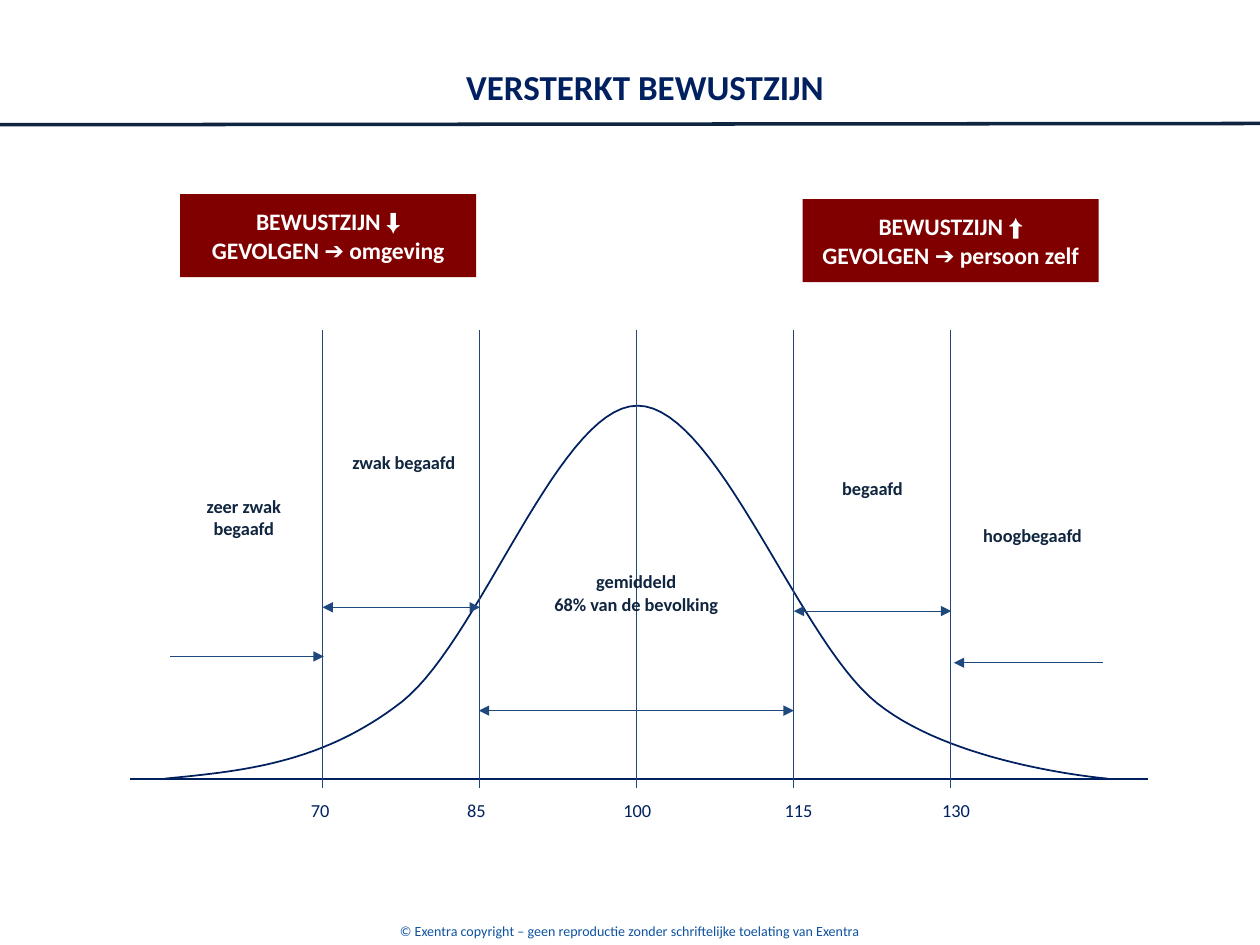
from lxml import etree
from pptx import Presentation
from pptx.dml.color import RGBColor
from pptx.enum.shapes import MSO_CONNECTOR, MSO_SHAPE
from pptx.enum.text import MSO_ANCHOR, PP_ALIGN
from pptx.oxml.ns import qn
from pptx.util import Inches, Pt

STRAIGHT = MSO_CONNECTOR.STRAIGHT
RECTANGLE = MSO_SHAPE.RECTANGLE
TOP, MIDDLE = MSO_ANCHOR.TOP, MSO_ANCHOR.MIDDLE
LEFT, CENTER = PP_ALIGN.LEFT, PP_ALIGN.CENTER

NAVY, INK, BLUE = "002060", "10253F", "1F497D"
TITLE = {"size": Pt(20), "bold": True, "color": NAVY}
SCORE = {"size": Pt(10.5), "bold": False, "color": NAVY}
GROUP = {"size": Pt(10.5), "bold": True, "color": INK}
EFFECT = {"size": Pt(13.5), "bold": True, "color": "FFFFFF"}
FOOTER = {"size": Pt(8), "bold": False, "color": "0D52A0"}

BELL_START = (1.31, 6.18)
BELL_CURVES = [
    ((1.93, 6.12), (2.56, 6.06), (3.19, 5.57)),
    ((3.81, 5.08), (4.44, 3.22), (5.06, 3.22)),
    ((5.69, 3.22), (6.34, 5.09), (6.96, 5.58)),
    ((7.58, 6.08), (8.79, 6.18), (8.79, 6.18)),
]
STEPS = 30


def rgb(value):
    """Turn a hex string into a colour."""
    return RGBColor.from_string(value)


def bezier(start, curves):
    """Return points along a chain of cubic curves."""
    points = []
    for first, second, end in curves:
        for step in range(1, STEPS + 1):
            t = step / STEPS
            weights = ((1 - t) ** 3, 3 * t * (1 - t) ** 2, 3 * t * t * (1 - t), t ** 3)
            corners = (start, first, second, end)
            points.append(tuple(
                Inches(sum(w * c[axis] for w, c in zip(weights, corners))) for axis in (0, 1)))
        start = end
    return points


class SlideBuilder:
    """Draw styled elements on one slide."""

    def __init__(self, slide, font="Calibri", symbol_font="Arial"):
        """Keep the slide and its fonts."""
        self.shapes = slide.shapes
        self.font = font
        self.symbol_font = symbol_font

    def fill_text(self, frame, lines, style, align=CENTER, anchor=TOP, spacing=1.0):
        """Fill a text frame with styled lines."""
        frame.word_wrap = True
        frame.vertical_anchor = anchor
        for index, line in enumerate(lines):
            paragraph = frame.paragraphs[0] if index == 0 else frame.add_paragraph()
            paragraph.alignment = align
            paragraph.line_spacing = spacing
            pieces = [line] if isinstance(line, str) else line
            for piece, font in zip(pieces, (self.font, self.symbol_font)):
                run = paragraph.add_run()
                run.text = piece
                for name, value in {**style, "name": font}.items():
                    if name == "color":
                        run.font.color.rgb = rgb(value)
                    else:
                        setattr(run.font, name, value)

    def text(self, box, lines, style, **layout):
        """Add a text box."""
        label = self.shapes.add_textbox(*map(Inches, box))
        self.fill_text(label.text_frame, lines, style, **layout)

    def panel(self, box, lines, fill):
        """Add a filled rectangle with centred text."""
        panel = self.shapes.add_shape(RECTANGLE, *map(Inches, box))
        panel.shadow.inherit = False
        panel.fill.solid()
        panel.fill.fore_color.rgb = rgb(fill)
        panel.line.fill.background()
        self.fill_text(panel.text_frame, lines, EFFECT, anchor=MIDDLE)

    def line(self, start, end, color=BLUE, width=0.5, arrows=()):
        """Add a straight line with optional arrowheads."""
        line = self.shapes.add_connector(STRAIGHT, *map(Inches, start + end))
        line.line.color.rgb = rgb(color)
        line.line.width = Pt(width)
        outline = line.line._get_or_add_ln()
        for arrow in arrows:
            etree.SubElement(outline, qn(f"a:{arrow}"), type="triangle")
        etree.SubElement(line._element.spPr, qn("a:effectLst"))

    def curve(self, start, curves, color, width):
        """Add an open, smooth outline."""
        builder = self.shapes.build_freeform(*map(Inches, start))
        builder.add_line_segments(bezier(start, curves), close=False)
        curve = builder.convert_to_shape()
        curve.shadow.inherit = False
        curve.fill.background()
        curve.line.color.rgb = rgb(color)
        curve.line.width = Pt(width)


def main():
    """Build the slide and save it."""
    deck = Presentation()
    deck.slide_width, deck.slide_height = Inches(10), Inches(7.5)
    builder = SlideBuilder(deck.slides.add_slide(deck.slide_layouts[6]))

    builder.text((0, 7.27, 10, 0.24),
                 ["© Exentra copyright – geen reproductie zonder schriftelijke toelating van Exentra"],
                 FOOTER)
    builder.line((0, 0.99), (10.03, 0.98), "0F243E", 2)
    builder.text((1.8, 0.51, 6.64, 0.48), ["VERSTERKT BEWUSTZIJN"], TITLE, spacing=0.9)

    builder.curve(BELL_START, BELL_CURVES, NAVY, 1)
    builder.line((1.03, 6.18), (9.11, 6.18), NAVY, 1)
    score_lefts = (2.37, 3.61, 4.85, 6.13, 7.38)
    for index, score_left in enumerate(score_lefts):
        boundary = 2.56 + 1.245 * index
        builder.line((boundary, 2.62), (boundary, 6.25))
        builder.text((score_left, 6.29, 0.5, 0.28), [str(70 + 15 * index)], SCORE, align=LEFT)

    for left, top, width, lines in (
        (1.32, 3.88, 1.23, ["zeer zwak", "begaafd"]),
        (2.59, 3.53, 1.23, ["zwak begaafd"]),
        (3.81, 4.48, 2.48, ["gemiddeld", "68% van de bevolking"]),
        (6.31, 3.74, 1.23, ["begaafd"]),
        (7.58, 4.11, 1.23, ["hoogbegaafd"]),
    ):
        builder.text((left, top, width, 0.1 + 0.18 * len(lines)), lines, GROUP)

    for start, end, height, arrows in (
        (2.56, 3.81, 4.82, ("headEnd", "tailEnd")),
        (3.8, 6.3, 5.64, ("headEnd", "tailEnd")),
        (6.3, 7.55, 4.85, ("headEnd", "tailEnd")),
        (1.35, 2.57, 5.21, ("tailEnd",)),
        (8.75, 7.57, 5.26, ("tailEnd",)),
    ):
        builder.line((start, height), (end, height), arrows=arrows)

    for left, top, direction, target in (
        (1.43, 1.54, "⬇", "omgeving"),
        (6.37, 1.58, "⬆", "persoon zelf"),
    ):
        builder.panel((left, top, 2.35, 0.66),
                      [("BEWUSTZIJN ", direction), f"GEVOLGEN ➔ {target}"], "800000")

    deck.save("out.pptx")


if __name__ == "__main__":
    main()
